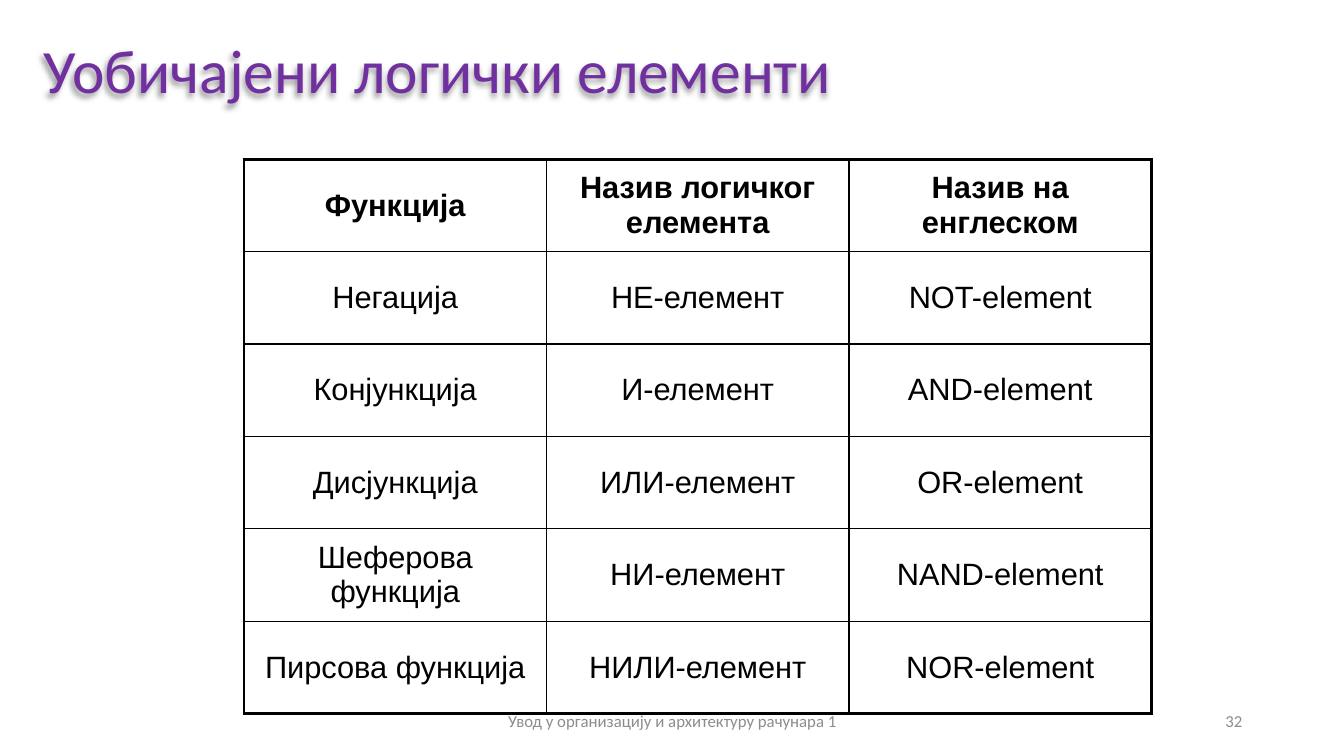
from dataclasses import dataclass

from lxml.etree import SubElement
from pptx import Presentation
from pptx.dml.color import RGBColor
from pptx.enum.text import MSO_ANCHOR as Anchor, PP_ALIGN as Align
from pptx.oxml.ns import qn
from pptx.slide import Slide
from pptx.table import _Cell as Cell
from pptx.util import Inches, Pt

PURPLE = RGBColor(0x70, 0x30, 0xA0)
GRAY = RGBColor(0x8C, 0x8C, 0x8C)
BLACK = RGBColor(0, 0, 0)
OUTER, INNER = Pt(2.25), Pt(1)

GATES = [
    ("Функција", "Назив логичког елемента", "Назив на енглеском"),
    ("Негација", "НЕ-елемент", "NOT-element"),
    ("Конјункција", "И-елемент", "AND-element"),
    ("Дисјункција", "ИЛИ-елемент", "OR-element"),
    ("Шеферова функција", "НИ-елемент", "NAND-element"),
    ("Пирсова функција", "НИЛИ-елемент", "NOR-element"),
]


@dataclass(frozen=True)
class Caption:
    text: str
    left: float
    top: float
    width: float
    height: float
    size: float
    color: RGBColor
    align: Align
    line_spacing: float = 1.0
    shadow: bool = False


CAPTIONS = [
    Caption("Уобичајени логички елементи", 0.33, 0.13, 11.22, 1.2, 44, PURPLE,
            Align.LEFT, line_spacing=0.9, shadow=True),
    Caption("Увод у организацију и архитектуру рачунара 1", 4.42, 6.95, 4.5, 0.4,
            12, GRAY, Align.CENTER),
    Caption("32", 9.42, 6.95, 3, 0.4, 12, GRAY, Align.RIGHT),
]


def add_caption(slide: Slide, caption: Caption) -> None:
    box = slide.shapes.add_textbox(Inches(caption.left), Inches(caption.top),
                                   Inches(caption.width), Inches(caption.height))
    frame = box.text_frame
    frame.word_wrap = True
    frame.vertical_anchor = Anchor.MIDDLE
    frame.text = caption.text
    line = frame.paragraphs[0]
    line.alignment = caption.align
    line.line_spacing = caption.line_spacing
    font = line.runs[0].font
    font.name, font.size = "Calibri", Pt(caption.size)
    font.color.rgb = caption.color
    if caption.shadow:
        # Soft shadow falling down and to the left
        effects = SubElement(box._element.spPr, qn("a:effectLst"))
        shadow = SubElement(effects, qn("a:outerShdw"), blurRad=str(Pt(4)),
                            dist=str(Pt(3)), dir="8100000", algn="tr", rotWithShape="0")
        tint = SubElement(shadow, qn("a:srgbClr"), val=str(BLACK))
        SubElement(tint, qn("a:alpha"), val="40000")


def set_borders(cell: Cell, widths: dict[str, int]) -> None:
    properties = cell._tc.get_or_add_tcPr()
    for position, (side, width) in enumerate(widths.items()):
        border = SubElement(properties, qn(f"a:{side}"), w=str(width))
        fill = SubElement(border, qn("a:solidFill"))
        SubElement(fill, qn("a:srgbClr"), val=str(BLACK))
        properties.insert(position, border)


def add_gate_table(slide: Slide) -> None:
    last_row, last_column = len(GATES) - 1, len(GATES[0]) - 1
    table = slide.shapes.add_table(len(GATES), len(GATES[0]), Inches(2.42),
                                   Inches(1.58), Inches(9), Inches(5.5)).table
    table.first_row = table.horz_banding = False
    for r, gate in enumerate(GATES):
        for c, text in enumerate(gate):
            cell = table.cell(r, c)
            cell.fill.background()
            cell.vertical_anchor = Anchor.MIDDLE
            cell.text_frame.text = text
            line = cell.text_frame.paragraphs[0]
            line.alignment = Align.CENTER
            line.space_before = Pt(4.4)
            font = line.runs[0].font
            font.name, font.size, font.bold = "Arial", Pt(22), r == 0
            font.color.rgb = BLACK
            set_borders(cell, {
                "lnL": OUTER if c == 0 else INNER,
                "lnR": OUTER if c == last_column else INNER,
                "lnT": OUTER if r == 0 else INNER,
                "lnB": OUTER if r == last_row else INNER,
            })


def main() -> None:
    deck = Presentation()
    deck.slide_width, deck.slide_height = Inches(13.33), Inches(7.5)
    slide = deck.slides.add_slide(deck.slide_layouts[6])

    # Title, then table, then footer and page number
    title, *footer = CAPTIONS
    add_caption(slide, title)
    add_gate_table(slide)
    for caption in footer:
        add_caption(slide, caption)

    deck.save("out.pptx")


if __name__ == "__main__":
    main()
